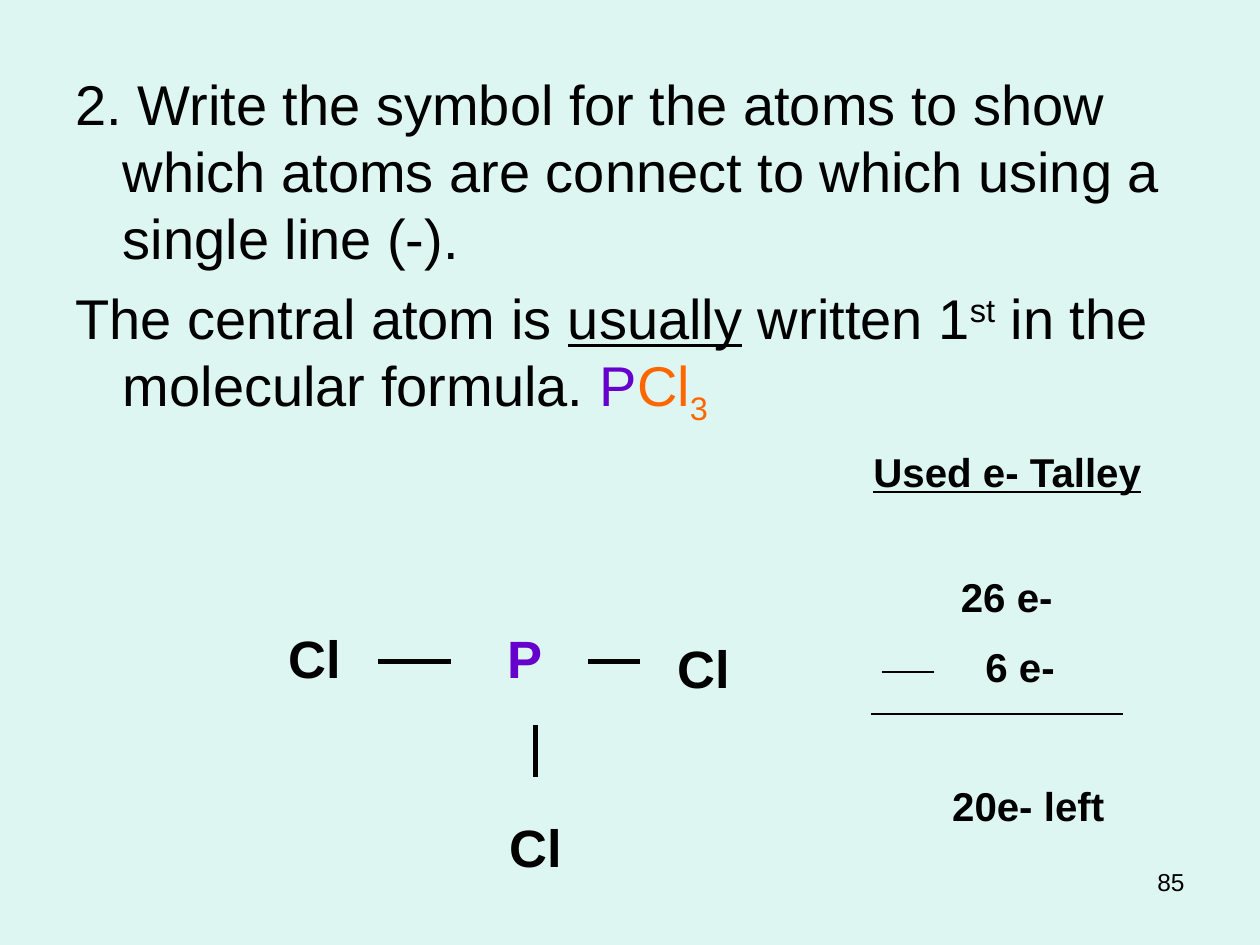
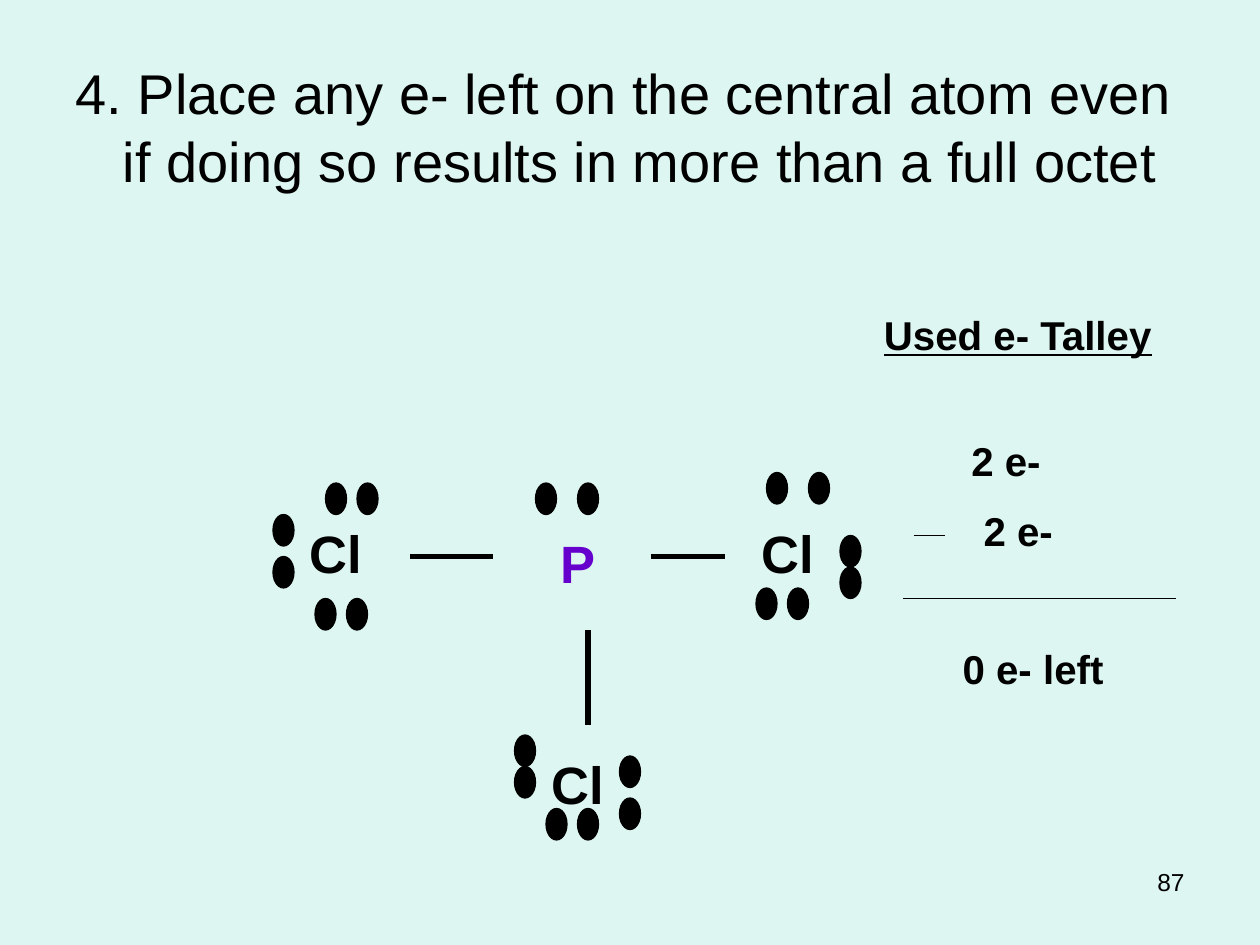
"""Build two slides on drawing the Lewis structure of PCl3."""
import pptx
import pptx.dml.color
import pptx.enum.shapes
import pptx.enum.text
import pptx.oxml.ns
import pptx.util
from lxml import etree

Pt = pptx.util.Pt
RGBColor = pptx.dml.color.RGBColor
ALIGN = pptx.enum.text.PP_ALIGN
BACKGROUND = RGBColor(0xDE, 0xF6, 0xF1)
BLACK = RGBColor(0x00, 0x00, 0x00)
PURPLE = RGBColor(0x66, 0x00, 0xCC)
ORANGE = RGBColor(0xFF, 0x66, 0x00)
FONT = "Arial"

STEPS = [
    {
        "number": "85",
        "body_top": 36,
        "body": [
            [("2. Write the symbol for the atoms to show which atoms are "
              "connect to which using a single line (-).", {})],
            [("The central atom is ", {}),
             ("usually", {"underline": True}),
             (" written 1", {}),
             ("st", {"baseline": 30000}),
             (" in the molecular formula. ", {}),
             ("P", {"color": PURPLE}),
             ("Cl", {"color": ORANGE}),
             ("3", {"color": ORANGE, "baseline": -25000})],
        ],
        "atoms": [("P", 276, 354), ("Cl", 378, 360), ("Cl", 282, 462), ("Cl", 156, 354)],
        "bonds": [(336, 378, 366, 378), (306, 414, 306, 444), (216, 378, 258, 378)],
        "electrons": [],
        "tally_at": (492, 252),
        "tally": [("26 e-", 50), ("6 e-", 64), ("20e- left", 45)],
        "tally_lines": [(498, 408, 642, 408), (504, 384, 534, 384)],
    },
    {
        "number": "87",
        "body_top": 30,
        "body": [
            [("4. Place any e- left on the central atom even if doing so "
              "results in more than a full octet", {})],
        ],
        "atoms": [("P", 306, 300), ("Cl", 168, 294), ("Cl", 306, 426), ("Cl", 426, 294)],
        "bonds": [(234, 318, 282, 318), (372, 318, 414, 318), (336, 360, 336, 414)],
        "electrons": [
            (306, 276), (330, 276),
            (186, 276), (204, 276), (156, 294), (156, 318), (180, 342), (198, 342),
            (438, 270), (462, 270), (480, 306), (480, 324), (432, 336), (450, 336),
            (294, 420), (294, 438), (312, 462), (330, 462), (354, 432), (354, 456),
        ],
        "tally_at": (498, 174),
        "tally": [("2 e-", 50), ("2 e-", 57), ("0 e- left", 45)],
        "tally_lines": [(516, 342, 672, 342), (522, 306, 540, 306)],
    },
]
TALLY_GAPS = [44, 12.5, 51.6]


def add_run(paragraph, text, size, bold=False, underline=False, color=BLACK, baseline=0):
    run = paragraph.add_run()
    run.text = text
    run.font.name = FONT
    run.font.size = Pt(size)
    run.font.bold = bold
    run.font.underline = underline
    run.font.color.rgb = color
    if baseline:
        run.font._element.set("baseline", str(baseline))


def add_text_frame(slide, left, top, width, height):
    frame = slide.shapes.add_textbox(Pt(left), Pt(top), Pt(width), Pt(height)).text_frame
    frame.word_wrap = True
    return frame


presentation = pptx.Presentation()
presentation.slide_width = Pt(720)
presentation.slide_height = Pt(540)
background = presentation.slide_master.background.fill
background.solid()
background.fore_color.rgb = BACKGROUND

for step in STEPS:
    slide = presentation.slides.add_slide(presentation.slide_layouts[1])
    title = slide.shapes.title._element
    title.getparent().remove(title)

    body = slide.placeholders[1]
    body.left, body.top, body.width, body.height = Pt(36), Pt(step["body_top"]), Pt(648), Pt(450)
    body.text_frame.auto_size = pptx.enum.text.MSO_AUTO_SIZE.NONE
    for index, runs in enumerate(step["body"]):
        paragraph = body.text_frame.paragraphs[0] if index == 0 else body.text_frame.add_paragraph()
        paragraph.space_before = Pt(7)
        properties = paragraph._p.get_or_add_pPr()
        properties.set("marL", str(Pt(27)))
        properties.set("indent", str(-Pt(27)))
        etree.SubElement(properties, pptx.oxml.ns.qn("a:buNone"))
        for text, style in runs:
            add_run(paragraph, text, 32, **style)

    for symbol, left, top in step["atoms"]:
        paragraph = add_text_frame(slide, left, top, 48, 43).paragraphs[0]
        paragraph.alignment = ALIGN.CENTER
        add_run(paragraph, symbol, 30, bold=True, color=PURPLE if symbol == "P" else BLACK)

    for lines, weight in ((step["bonds"], 3), (step["tally_lines"], 0.75)):
        for ends in lines:
            line = slide.shapes.add_connector(
                pptx.enum.shapes.MSO_CONNECTOR.STRAIGHT, *[Pt(value) for value in ends])
            line.line.color.rgb = BLACK
            line.line.width = Pt(weight)
            etree.SubElement(line._element.spPr, pptx.oxml.ns.qn("a:effectLst"))

    for left, top in step["electrons"]:
        electron = slide.shapes.add_shape(
            pptx.enum.shapes.MSO_SHAPE.OVAL, Pt(left), Pt(top), Pt(12), Pt(18))
        electron.shadow.inherit = False
        electron.fill.solid()
        electron.fill.fore_color.rgb = BLACK
        electron.line.color.rgb = BLACK
        electron.line.width = Pt(0.75)

    tally = add_text_frame(slide, *step["tally_at"], 174, 266)
    add_run(tally.paragraphs[0], "Used e- Talley", 23, bold=True, underline=True)
    for (text, indent), gap in zip(step["tally"], TALLY_GAPS):
        paragraph = tally.add_paragraph()
        paragraph.space_before = Pt(gap)
        paragraph._p.get_or_add_pPr().set("marL", str(Pt(indent)))
        add_run(paragraph, text, 23, bold=True)

    number = add_text_frame(slide, 516, 492, 168, 37).paragraphs[0]
    number.alignment = ALIGN.RIGHT
    add_run(number, step["number"], 14)

presentation.save("out.pptx")
